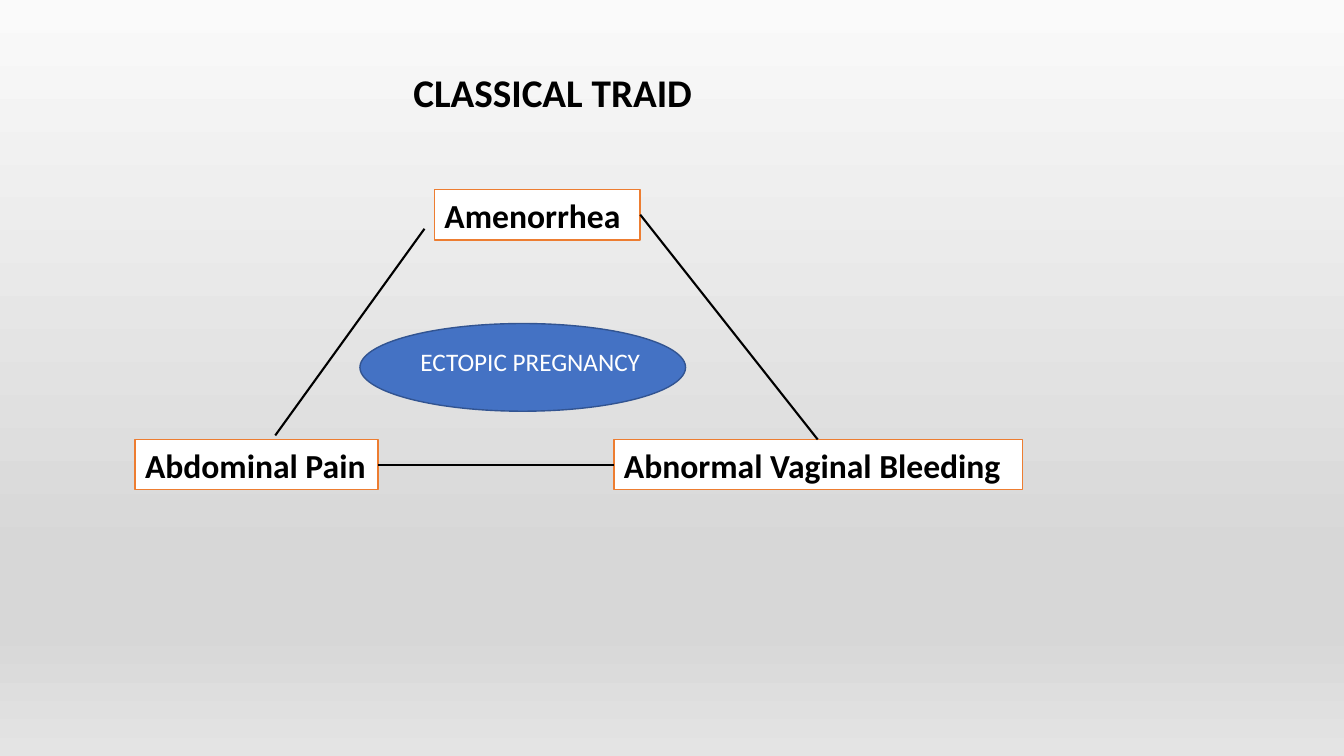
from lxml.etree import SubElement
from pptx import Presentation
from pptx.dml.color import RGBColor
from pptx.enum.shapes import MSO_CONNECTOR, MSO_SHAPE
from pptx.enum.text import MSO_ANCHOR, PP_ALIGN
from pptx.oxml.ns import qn
from pptx.util import Inches, Pt

COLOURS = {
    "text": "000000",
    "box": "FFFFFF",
    "box_line": "ED7D31",
    "centre": "4472C4",
    "centre_line": "325491",
    "centre_text": "FFFFFF",
}
BACKGROUND_STOPS = [(0, "FAFAFA"), (74, "D7D7D7"), (83, "D7D7D7"), (100, "E4E4E4")]
SYMPTOMS = [
    ("Amenorrhea", 4.31, 1.88, 2.04),
    ("Abnormal Vaginal Bleeding", 6.09, 4.36, 4.05),
    ("Abdominal Pain", 1.34, 4.36, 2.41),
]
SIDES = [
    ((4.21, 2.27), (2.73, 4.32)),
    ((3.75, 4.61), (6.09, 4.61)),
    ((6.35, 2.13), (8.11, 4.36)),
]


def colour(name):
    """Return the named colour."""
    return RGBColor.from_string(COLOURS[name])


def paint_background(page):
    """Fill the page with a vertical grey gradient."""
    fill = page.background.fill
    fill.gradient()
    fill.gradient_angle = 270
    stops = page.element.find(".//" + qn("a:gsLst"))
    for stop in list(stops):
        stops.remove(stop)
    for percent, value in BACKGROUND_STOPS:
        stop = SubElement(stops, qn("a:gs"), pos=str(percent * 1000))
        SubElement(stop, qn("a:srgbClr"), val=value)


def write_text(shape, text, size, colour_name="text", bold=True, margin_left=0.1):
    """Write one left-aligned line at the top of a shape."""
    frame = shape.text_frame
    frame.word_wrap = True
    frame.vertical_anchor = MSO_ANCHOR.TOP
    frame.margin_left = Inches(margin_left)
    frame.margin_right = Inches(0)
    para = frame.paragraphs[0]
    para.alignment = PP_ALIGN.LEFT
    span = para.add_run()
    span.text = text
    span.font.name = "Calibri"
    span.font.size = Pt(size)
    span.font.bold = bold
    span.font.color.rgb = colour(colour_name)


def add_title(page, text):
    """Move the title placeholder into place and fill it."""
    title = page.shapes.title
    title.left, title.top = Inches(2.94), Inches(0.63)
    title.width, title.height = Inches(4.58), Inches(0.57)
    write_text(title, text, 28, margin_left=1.16)


def add_outlined(page, kind, left, top, width, height, fill, line):
    """Add a filled preset shape with a thin outline."""
    shape = page.shapes.add_shape(
        kind, Inches(left), Inches(top), Inches(width), Inches(height)
    )
    shape.shadow.inherit = False
    shape.fill.solid()
    shape.fill.fore_color.rgb = colour(fill)
    shape.line.color.rgb = colour(line)
    shape.line.width = Pt(1)
    return shape


def add_symptom(page, text, left, top, width):
    """Add a labelled corner of the triad."""
    box = add_outlined(
        page, MSO_SHAPE.RECTANGLE, left, top, width, 0.5, "box", "box_line"
    )
    write_text(box, text, 24)


def add_side(page, start, end):
    """Join two corners with a straight line."""
    side = page.shapes.add_connector(
        MSO_CONNECTOR.STRAIGHT, *(Inches(value) for value in start + end)
    )
    side.line.color.rgb = colour("text")
    side.line.width = Pt(1.5)
    SubElement(side.element.spPr, qn("a:effectLst"))


def add_diagnosis(page, text):
    """Add the central ellipse and its caption."""
    add_outlined(
        page, MSO_SHAPE.OVAL, 3.57, 3.21, 3.23, 0.87, "centre", "centre_line"
    )
    caption = page.shapes.add_textbox(
        Inches(3.84), Inches(3.39), Inches(2.71), Inches(0.4)
    )
    write_text(caption, text, 18, "centre_text", bold=False, margin_left=0.33)


def main():
    """Build the triad slide and save it."""
    deck = Presentation()
    deck.slide_width, deck.slide_height = Inches(13.33), Inches(7.5)
    page = deck.slides.add_slide(deck.slide_layouts[5])
    paint_background(page)
    add_title(page, "CLASSICAL TRAID")
    for symptom in SYMPTOMS:
        add_symptom(page, *symptom)
    for start, end in SIDES:
        add_side(page, start, end)
    add_diagnosis(page, "ECTOPIC PREGNANCY")
    deck.save("out.pptx")


if __name__ == "__main__":
    main()
